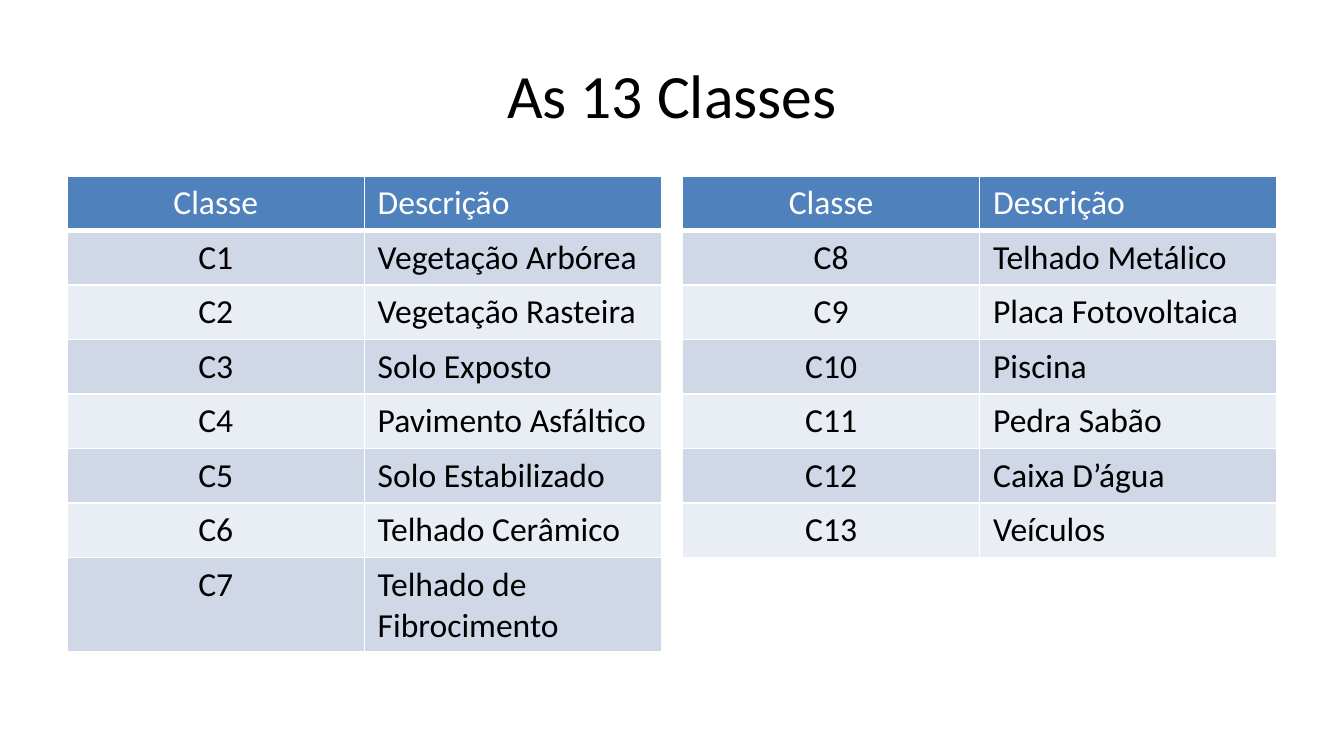
import lxml.etree
import pptx
import pptx.dml.color
import pptx.enum.text
import pptx.oxml.ns
import pptx.util

Cm, Pt = pptx.util.Cm, pptx.util.Pt
ALIGN = pptx.enum.text.PP_ALIGN

TITLE = "As 13 Classes"
HEADER = ("Classe", "Descrição")
DESCRIPTIONS = [
    "Vegetação Arbórea", "Vegetação Rasteira", "Solo Exposto",
    "Pavimento Asfáltico", "Solo Estabilizado", "Telhado Cerâmico",
    "Telhado de Fibrocimento", "Telhado Metálico", "Placa Fotovoltaica",
    "Piscina", "Pedra Sabão", "Caixa D’água", "Veículos",
]
FIRST_TABLE_ROWS = 7

THEME = {
    "font": "Calibri", "title_size": 33, "table_size": 18,
    "text": "000000", "header_text": "FFFFFF", "header_fill": "4F81BD",
    "bands": ("D0D8E8", "E9EDF4"), "border": "FFFFFF",
}

# Lengths in centimetres
SLIDE_W, SLIDE_H = 25.4, 14.29
MARGIN = 1.27
TITLE_TOP, TITLE_H = 0.58, 2.39
TABLE_TOP, TABLE_GAP = 3.33, 0.4
TABLE_W = (SLIDE_W - 2 * MARGIN - TABLE_GAP) / 2
ROW_H = 1.03


def rgb(value):
    return pptx.dml.color.RGBColor.from_string(value)


def write_text(tf, text, size, color=THEME["text"], align=ALIGN.LEFT):
    p = tf.paragraphs[0]
    p.alignment = align
    r = p.add_run()
    r.text = text
    r.font.name = THEME["font"]
    r.font.size = Pt(size)
    r.font.bold = False
    r.font.color.rgb = rgb(color)


def set_borders(cell, bottom):
    """Draw the four cell borders; bottom is the lower width in points."""
    qn = pptx.oxml.ns.qn
    tc_pr = cell._tc.get_or_add_tcPr()
    for side, width in (("L", 1), ("R", 1), ("T", 1), ("B", bottom)):
        ln = lxml.etree.SubElement(tc_pr, qn(f"a:ln{side}"), w=str(Pt(width)))
        fill = lxml.etree.SubElement(ln, qn("a:solidFill"))
        lxml.etree.SubElement(fill, qn("a:srgbClr"), val=THEME["border"])


def add_class_table(s, left, entries):
    rows = [HEADER, *entries]
    table = s.shapes.add_table(
        len(rows), len(HEADER), Cm(left), Cm(TABLE_TOP),
        Cm(TABLE_W), Cm(ROW_H * len(rows))).table
    for i, row in enumerate(rows):
        is_header = i == 0
        fill = THEME["header_fill"] if is_header else THEME["bands"][(i - 1) % 2]
        for j, text in enumerate(row):
            cell = table.cell(i, j)
            set_borders(cell, bottom=3 if is_header else 1)
            cell.fill.solid()
            cell.fill.fore_color.rgb = rgb(fill)
            write_text(cell.text_frame, text, THEME["table_size"],
                       color=THEME["header_text" if is_header else "text"],
                       align=ALIGN.CENTER if j == 0 else ALIGN.LEFT)


def main():
    prs = pptx.Presentation()
    prs.slide_width, prs.slide_height = Cm(SLIDE_W), Cm(SLIDE_H)
    s = prs.slides.add_slide(prs.slide_layouts[6])

    tf = s.shapes.add_textbox(Cm(MARGIN), Cm(TITLE_TOP),
                              Cm(SLIDE_W - 2 * MARGIN), Cm(TITLE_H)).text_frame
    tf.word_wrap = True
    tf.vertical_anchor = pptx.enum.text.MSO_ANCHOR.MIDDLE
    write_text(tf, TITLE, THEME["title_size"], align=ALIGN.CENTER)

    classes = [(f"C{n}", text) for n, text in enumerate(DESCRIPTIONS, 1)]
    groups = (classes[:FIRST_TABLE_ROWS], classes[FIRST_TABLE_ROWS:])
    for k, entries in enumerate(groups):
        add_class_table(s, MARGIN + k * (TABLE_W + TABLE_GAP), entries)

    prs.save("out.pptx")


if __name__ == "__main__":
    main()
